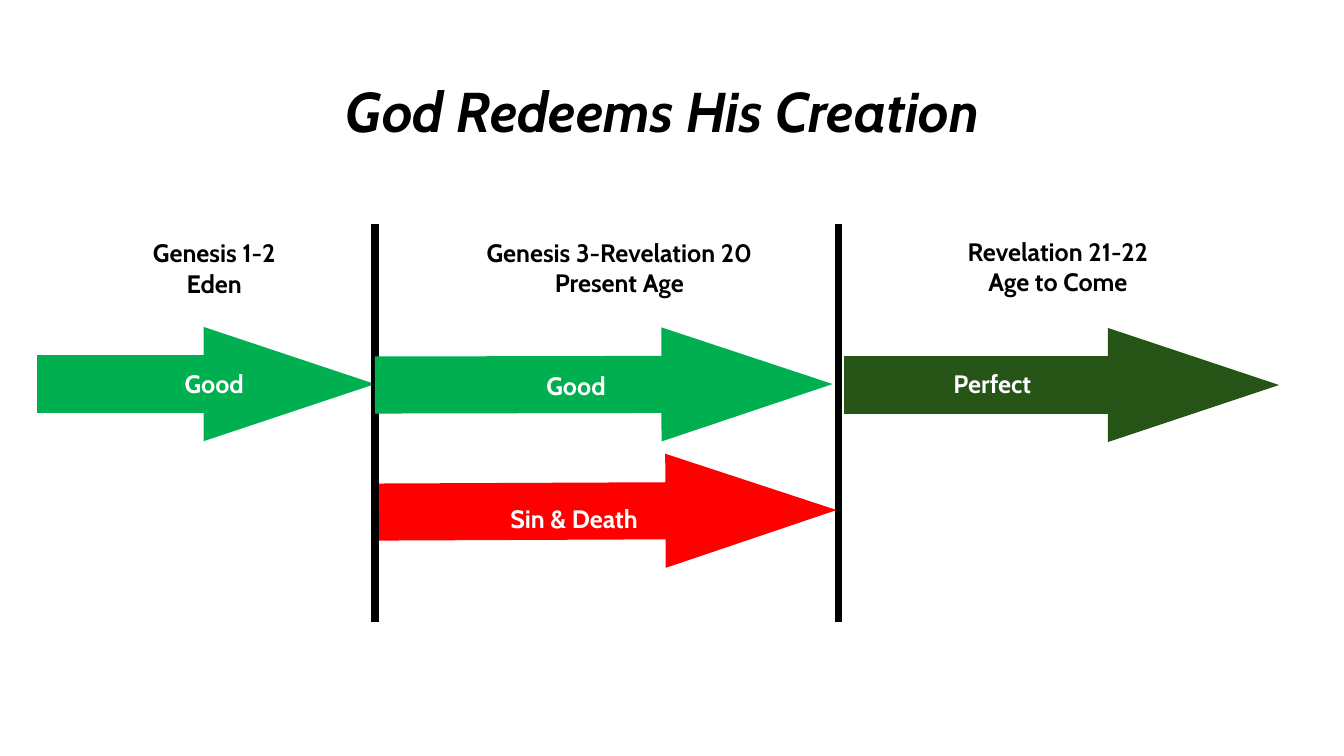
"""Build a timeline slide of three ages, divided by bars and crossed by arrows."""
from lxml import etree
from pptx import Presentation
from pptx import util as u
from pptx.dml.color import RGBColor
from pptx.enum import shapes, text
from pptx.oxml.ns import qn

COLORS = {"ink": "000000", "label": "FFFFFF", "good": "00B050",
          "perfect": "275417", "death": "FF0000"}
FONT = "Cabin"
CELL = 0.1
SLIDE = (133.33, 75)
TITLE = ("God Redeems His Creation", (27.1, 7.1, 77.3, 7.7))
BOX_WIDTH = 31.7
ROW_HEIGHTS = {1: 4, 2: 7.1}

AGES = [
    (["Genesis 1-2", "Eden"], 5.4, 23.1),
    (["Genesis 3-Revelation 20", "Present Age"], 45.6, 23),
    (["Revelation 21-22", "Age to Come"], 89.1, 22.9),
]
ARROWS = [
    ("Good", "good", (3.7, 38.1), (37.2, 38.1), (5.4, 36.1)),
    ("Good", "good", (37.2, 38.2), (82.6, 38.1), (41.3, 36.2)),
    ("Sin & Death", "death", (37.6, 50.8), (83, 50.6), (41.1, 49.4)),
    ("Perfect", "perfect", (83.7, 38.2), (126.9, 38.2), (82.6, 36.1)),
]
DIVIDERS = [37.2, 83.2]
DIVIDER_ROWS = (22.2, 61.7)
WEIGHTS = {"arrow": 40.75, "divider": 5.25}


def grid(*cells):
    return [u.Inches(cell * CELL) for cell in cells]


def fill_text(box, lines, color, size, italic=False):
    frame = box.text_frame
    frame.text = "\n".join(lines)
    frame_format = {"word_wrap": True, "auto_size": text.MSO_AUTO_SIZE.NONE,
                    "vertical_anchor": text.MSO_ANCHOR.TOP}
    for name, value in frame_format.items():
        setattr(frame, name, value)
    font_format = {"name": FONT, "size": u.Pt(size), "bold": True, "italic": italic}
    for para in frame.paragraphs:
        para.alignment = text.PP_ALIGN.CENTER
        for span in para.runs:
            for name, value in font_format.items():
                setattr(span.font, name, value)
            span.font.color.rgb = RGBColor.from_string(COLORS[color])


def add_label(page, lines, color, left, top):
    place = grid(left, top, BOX_WIDTH, ROW_HEIGHTS[len(lines)])
    fill_text(page.shapes.add_textbox(*place), lines, color, 18)


def add_line(page, start, end, color, weight):
    line = page.shapes.add_connector(shapes.MSO_CONNECTOR.STRAIGHT, *grid(*start, *end))
    line.line.width = u.Pt(weight)
    line.line.color.rgb = RGBColor.from_string(COLORS[color])
    etree.SubElement(line._element.spPr, qn("a:effectLst"))
    return line


def add_arrow(page, label, color, start, end, label_place):
    arrow = add_line(page, start, end, color, WEIGHTS["arrow"])
    etree.SubElement(arrow.line._get_or_add_ln(), qn("a:tailEnd"),
                     type="triangle", w="sm", len="med")
    add_label(page, [label], "label", *label_place)


def main():
    deck = Presentation()
    deck.slide_width, deck.slide_height = grid(*SLIDE)
    page = deck.slides.add_slide(deck.slide_layouts[5])

    heading, place = TITLE
    title = page.shapes.title
    for name, value in zip(("left", "top", "width", "height"), grid(*place)):
        setattr(title, name, value)
    fill_text(title, [heading], "ink", 40, italic=True)

    for lines, left, top in AGES:
        add_label(page, lines, "ink", left, top)
    first_arrow, *later_arrows = ARROWS
    add_arrow(page, *first_arrow)
    top, bottom = DIVIDER_ROWS
    for column in DIVIDERS:
        add_line(page, (column, top), (column, bottom), "ink", WEIGHTS["divider"])
    for arrow in later_arrows:
        add_arrow(page, *arrow)

    deck.save("out.pptx")


if __name__ == "__main__":
    main()
